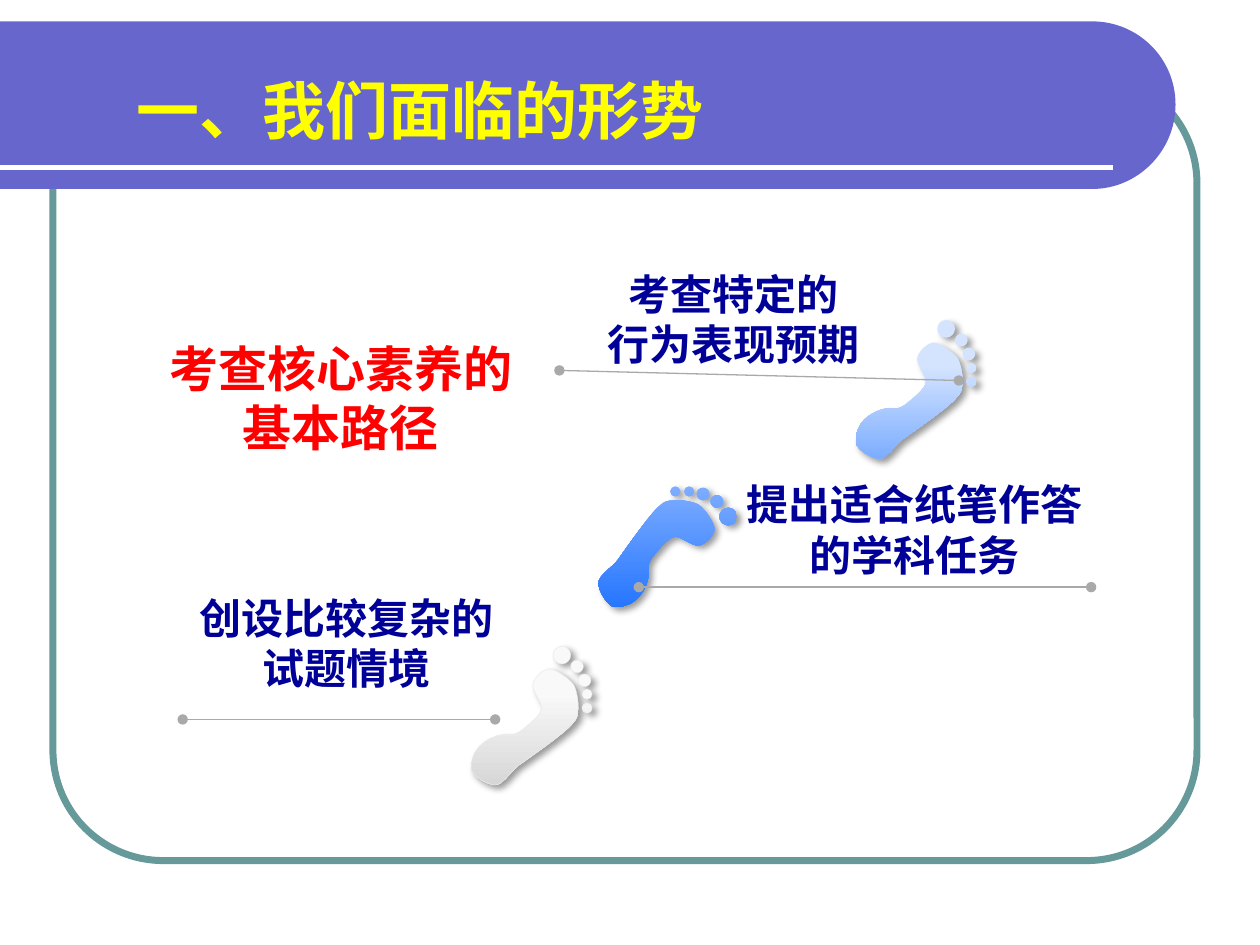
from dataclasses import dataclass

from lxml import etree
from pptx import Presentation
from pptx.dml.color import RGBColor
from pptx.enum.shapes import MSO_CONNECTOR, MSO_SHAPE
from pptx.enum.text import MSO_ANCHOR, MSO_AUTO_SIZE, PP_ALIGN
from pptx.oxml.ns import qn
from pptx.util import Inches, Pt

LINE = MSO_CONNECTOR.STRAIGHT
ROUND = MSO_SHAPE.ROUNDED_RECTANGLE
GROW = MSO_AUTO_SIZE.SHAPE_TO_FIT_TEXT
TOP = MSO_ANCHOR.TOP
LEFT, MID = PP_ALIGN.LEFT, PP_ALIGN.CENTER


@dataclass(frozen=True)
class Theme:
    teal: str = "669999"
    violet: str = "6666CC"
    white: str = "FFFFFF"
    yellow: str = "FFFF00"
    red: str = "FF0000"
    navy: str = "000099"
    grey: str = "A9A9A9"
    edge: str = "EAEAEA"
    pale: tuple = ((0.33, "F9F9F9"), (1, "D7D7D7"))
    sky: tuple = ((0.33, "D4E4FF"), (1, "7DADFF"))
    blue: tuple = ((0, "7DADFF"), (1, "2676FF"))
    head: str = "Noto Sans CJK JP"
    body: str = "Arial"
    title: int = 36
    large: int = 28
    label: int = 24


THEME = Theme()
WIDE, TALL = 0.96, 1.10
TOES = [(0.92, 0.49, 0.04), (0.92, 0.38, 0.04), (0.9, 0.27, 0.05),
        (0.84, 0.16, 0.05), (0.72, 0.07, 0.07)]
SOLE = [
    (0.62, 0.18), (0.67, 0.18), (0.77, 0.25), (0.81, 0.3),
    (0.84, 0.35), (0.85, 0.43), (0.85, 0.49),
    (0.84, 0.55), (0.86, 0.56), (0.78, 0.64),
    (0.7, 0.72), (0.44, 0.9), (0.37, 0.95),
    (0.31, 1.0), (0.25, 1.1), (0.19, 1.1),
    (0.13, 1.1), (0.01, 1.03), (0, 0.97),
    (0, 0.91), (0.02, 0.8), (0.14, 0.74),
    (0.25, 0.68), (0.29, 0.71), (0.34, 0.7),
    (0.4, 0.68), (0.42, 0.65), (0.46, 0.62),
    (0.49, 0.59), (0.55, 0.55), (0.56, 0.49),
    (0.56, 0.44), (0.48, 0.35), (0.49, 0.3),
    (0.5, 0.25), (0.57, 0.18), (0.62, 0.18),
]
BANNER = [
    [(0, 0.17)], [(8.67, 0.17)],
    [(9.03, 0.17), (9.33, 0.46), (9.33, 0.83)],
    [(9.33, 1.2), (9.03, 1.5), (8.67, 1.5)],
    [(0, 1.5)],
]


def color(code):
    return RGBColor.from_string(code)


def split(knots):
    return [knots[:1]] + [knots[i:i + 3] for i in range(1, len(knots), 3)]


def ring(x, y, r):
    k = 0.55 * r
    knots = [(x + r, y)]
    for a, b in [(1, 0), (0, 1), (-1, 0), (0, -1)]:
        knots += [(x + a * r - b * k, y + b * r + a * k),
                  (x + a * k - b * r, y + b * k + a * r),
                  (x - b * r, y + a * r)]
    return split(knots)


def add_form(slide, paths):
    form = None
    for path in paths:
        start, *rest = [(Inches(x), Inches(y)) for part in path for x, y in part]
        if form:
            form.move_to(*start)
        else:
            form = slide.shapes.build_freeform(*start)
        form.add_line_segments(rest)
    shape = form.convert_to_shape()
    steps = shape.element.iter(qn("a:lnTo"))
    bend(list(steps), [len(part) for path in paths for part in path[1:]])
    shape.shadow.inherit = False
    shape.line.fill.background()
    return shape


def bend(steps, sizes):
    steps = iter(steps)
    for size in sizes:
        group = [next(steps) for _ in range(size)]
        if size == 3:
            cubic = etree.Element(qn("a:cubicBezTo"))
            group[0].addprevious(cubic)
            for step in group:
                cubic.append(step[0])
                step.getparent().remove(step)


def add_shade(shape):
    effects = shape.element.spPr.find(qn("a:effectLst"))
    outer = etree.SubElement(
        effects, qn("a:outerShdw"), blurRad=str(Pt(4)), dist=str(Pt(3)),
        dir=str(45 * 60000), algn="tl", rotWithShape="0")
    tint = etree.SubElement(outer, qn("a:srgbClr"), val="000000")
    etree.SubElement(tint, qn("a:alpha"), val="40000")


def add_foot(slide, left, top, stops, flip=False, edge=None):
    def place(x, y):
        if flip:
            x, y = TALL - y, WIDE - x
        return left + x, top + y

    paths = [ring(*toe) for toe in TOES]
    paths.insert(3, split(SOLE))
    foot = add_form(slide, [[[place(*point) for point in part] for part in path]
                            for path in paths])
    foot.fill.gradient()
    foot.fill.gradient_angle = 270
    for stop, (spot, code) in zip(foot.fill.gradient_stops, stops):
        stop.position = spot
        stop.color.rgb = color(code)
    if edge:
        foot.line.color.rgb = color(edge)
        foot.line.width = Pt(0.25)
    add_shade(foot)


def add_line(slide, start, end, code, width, dots=False):
    line = slide.shapes.add_connector(LINE, *map(Inches, start + end))
    line.line.color.rgb = color(code)
    line.line.width = Pt(width)
    if dots:
        stroke = line.line._get_or_add_ln()
        for tag in ("a:headEnd", "a:tailEnd"):
            etree.SubElement(stroke, qn(tag), type="oval")
    etree.SubElement(line.element.spPr, qn("a:effectLst"))


def set_text(shape, lines, font, size, code, align):
    frame = shape.text_frame
    frame.word_wrap = True
    frame.auto_size = GROW
    frame.vertical_anchor = TOP
    frame.text = "\n".join(lines)
    for para in frame.paragraphs:
        para.alignment = align
        para.font.name = font
        para.font.size = Pt(size)
        para.font.bold = True
        para.font.color.rgb = color(code)


def add_text(slide, box, lines, size, code):
    shape = slide.shapes.add_textbox(*map(Inches, box))
    set_text(shape, lines, THEME.body, size, code, MID)


def add_frame(slide):
    frame = slide.shapes.add_shape(ROUND, *map(Inches, (0.42, 0.58, 9.08, 6.25)))
    frame.adjustments[0] = 0.14
    frame.shadow.inherit = False
    frame.fill.background()
    frame.line.color.rgb = color(THEME.teal)
    frame.line.width = Pt(4)
    banner = add_form(slide, [BANNER])
    banner.fill.solid()
    banner.fill.fore_color.rgb = color(THEME.violet)
    add_line(slide, (0, 1.33), (8.83, 1.33), THEME.white, 3)


def add_title(slide, text):
    title = slide.shapes.title
    slide.shapes.element.append(title.element)
    title.left, title.top, title.width, title.height = map(
        Inches, (0.98, 0.52, 7.56, 0.71))
    set_text(title, [text], THEME.head, THEME.title, THEME.yellow, LEFT)


def main():
    deck = Presentation()
    deck.slide_width, deck.slide_height = Inches(10), Inches(7.5)
    slide = deck.slides.add_slide(deck.slide_layouts[5])
    add_frame(slide)
    add_title(slide, "一、我们面临的形势")
    add_text(slide, (1.08, 2.64, 3.25, 1.04), ["考查核心素养的基本路径"],
             THEME.large, THEME.red)
    add_foot(slide, 3.74, 5.13, THEME.pale, edge=THEME.edge)
    add_foot(slide, 6.79, 2.54, THEME.sky)
    add_foot(slide, 4.75, 3.86, THEME.blue, flip=True)
    for start, end in [((8.66, 4.66), (5.07, 4.66)),
                       ((4.44, 2.94), (7.61, 3.02)),
                       ((1.45, 5.71), (3.93, 5.71))]:
        add_line(slide, start, end, THEME.grey, 0.75, dots=True)
    for left, top, width, lines in [
        (1.45, 4.65, 2.6, ["创设比较复杂的试题情境"]),
        (5.77, 3.75, 2.97, ["提出适合纸笔作答的学科任务"]),
        (4.52, 2.08, 2.6, ["考查特定的", "行为表现预期"]),
    ]:
        add_text(slide, (left, top, width, 0.91), lines, THEME.label, THEME.navy)
    deck.save("out.pptx")


if __name__ == "__main__":
    main()
